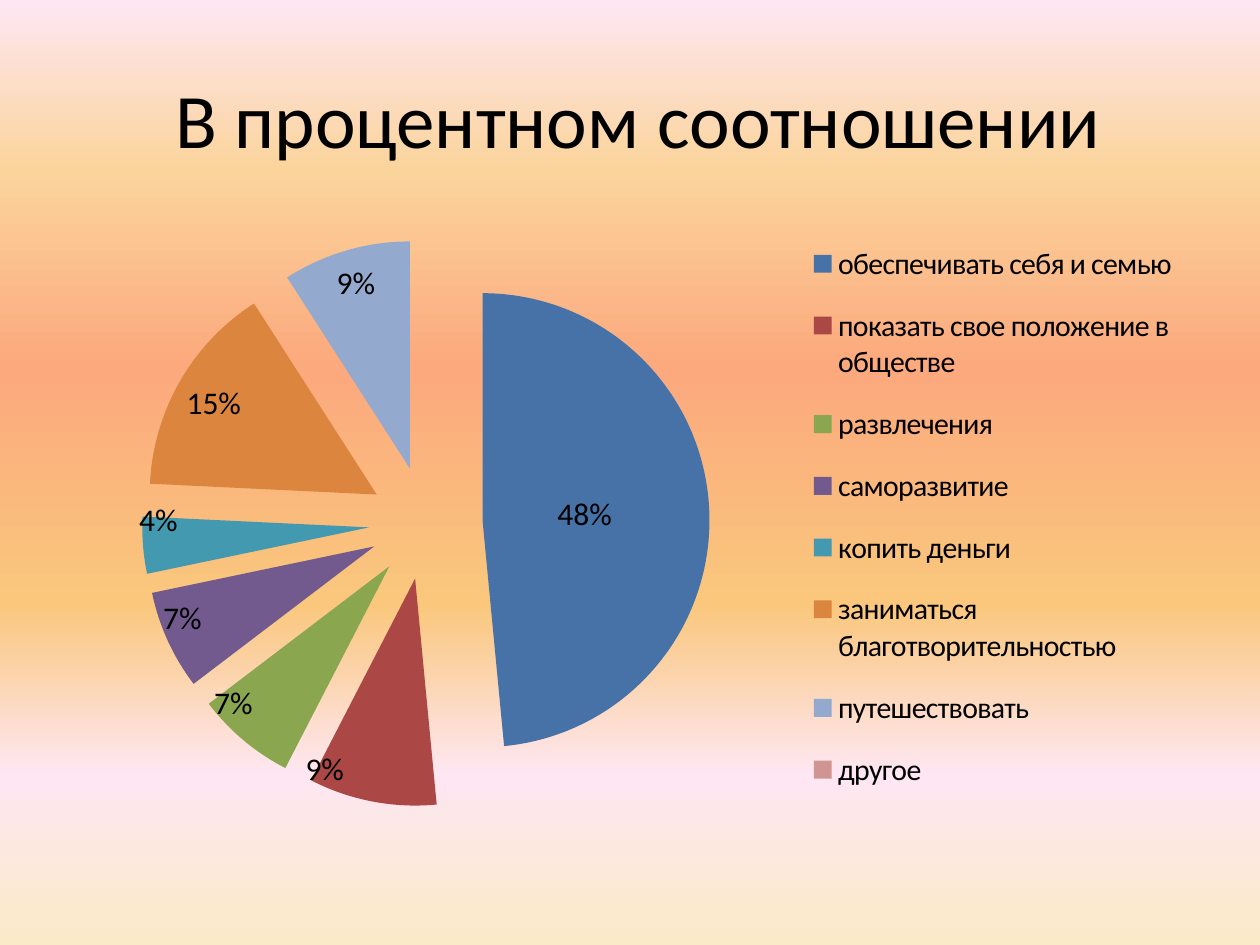
from lxml.etree import SubElement
from pptx import Presentation
from pptx.chart.data import CategoryChartData
from pptx.dml.color import RGBColor
from pptx.enum.chart import XL_CHART_TYPE, XL_LABEL_POSITION, XL_LEGEND_POSITION
from pptx.enum.text import MSO_ANCHOR, PP_ALIGN
from pptx.oxml.ns import qn
from pptx.util import Inches, Pt

FONT = "Calibri"
BLACK = RGBColor(0x00, 0x00, 0x00)
CREAM = RGBColor(0xFB, 0xEA, 0xC7)
PINK = RGBColor(0xFE, 0xE7, 0xF2)
GOLD = RGBColor(0xFA, 0xC7, 0x7D)
CORAL = RGBColor(0xFB, 0xA9, 0x7D)
SAND = RGBColor(0xFB, 0xD4, 0x9C)
BLUE = RGBColor(0x46, 0x72, 0xA8)
RED = RGBColor(0xAB, 0x47, 0x44)
GREEN = RGBColor(0x8A, 0xA6, 0x4F)
PURPLE = RGBColor(0x72, 0x5A, 0x8F)
TEAL = RGBColor(0x42, 0x99, 0xB0)
ORANGE = RGBColor(0xDC, 0x85, 0x3E)
PALE = RGBColor(0x93, 0xA9, 0xCE)
ROSE = RGBColor(0xD0, 0x94, 0x93)

WIDTH, HEIGHT = Inches(10), Inches(7.5)
# Stops run from the bottom of the slide to the top
STOPS = [(0, CREAM), (18, PINK), (36, GOLD), (61, CORAL), (82, SAND), (100, PINK)]
# Name, share, colour, and shift of the label as shares of the chart
GOALS = [
    ("обеспечивать себя и семью", 0.48, BLUE, (-0.01, 0)),
    ("показать свое положение в обществе", 0.09, RED, (-0.06, -0.01)),
    ("развлечения", 0.07, GREEN, (-0.03, -0.02)),
    ("саморазвитие", 0.07, PURPLE, (-0.01, 0)),
    ("копить деньги", 0.04, TEAL, (-0.01, -0.04)),
    ("заниматься благотворительностью", 0.15, ORANGE, None),
    ("путешествовать", 0.09, PALE, (-0.01, 0.01)),
    ("другое", 0, ROSE, None),
]


def box(x, y, w, h):
    """Turn shares of the slide into lengths."""
    return int(x * WIDTH), int(y * HEIGHT), int(w * WIDTH), int(h * HEIGHT)


def style(font, size, color=BLACK):
    font.name, font.size = FONT, Pt(size)
    font.color.rgb = color


def add_text(slide, text, area, size=18, color=BLACK, align=PP_ALIGN.CENTER):
    frame = slide.shapes.add_textbox(*area).text_frame
    frame.word_wrap = True
    frame.vertical_anchor = MSO_ANCHOR.MIDDLE
    para = frame.paragraphs[0]
    para.alignment = align
    run = para.add_run()
    run.text = text
    style(run.font, size, color)


def paint_back(slide):
    fill = slide.background.fill
    fill.gradient()
    fill.gradient_angle = 90
    stops = slide.element.find(".//" + qn("a:gsLst"))
    for stop in list(stops):
        stops.remove(stop)
    for pos, color in STOPS:
        stop = SubElement(stops, qn("a:gs"), pos=str(pos * 1000))
        SubElement(stop, qn("a:srgbClr"), val=str(color))


def set_place(owner, spot, after=None, inner=False):
    """Place a chart part by shares of the chart: x, y, w, h, or a shift x, y."""
    old = owner.find(qn("c:layout"))
    if old is not None:
        owner.remove(old)
    layout = SubElement(owner, qn("c:layout"))
    manual = SubElement(layout, qn("c:manualLayout"))
    if inner:
        SubElement(manual, qn("c:layoutTarget"), val="inner")
    if len(spot) == 4:
        for tag in ("xMode", "yMode"):
            SubElement(manual, qn("c:" + tag), val="edge")
    for tag, share in zip("xywh", spot):
        SubElement(manual, qn("c:" + tag), val=str(share))
    if after:
        owner.find(qn(after)).addnext(layout)
    else:
        owner.insert(0, layout)


def add_labels(series):
    """Show the shares, with none for an empty slice."""
    labels = series.data_labels
    labels.show_value = True
    labels.show_percentage = False
    labels.number_format = "0%;;"
    labels.number_format_is_linked = False
    labels.position = XL_LABEL_POSITION.INSIDE_END
    style(labels.font, 18)
    for i, (_, _, _, shift) in enumerate(GOALS):
        if shift:
            series.points[i].data_label.position = (
                XL_LABEL_POSITION.INSIDE_END if i else XL_LABEL_POSITION.CENTER)
            mark = labels._element.findall(qn("c:dLbl"))[-1]
            set_place(mark, shift, after="c:idx")


def add_pie(slide, area):
    data = CategoryChartData(number_format="0%")
    data.categories = [goal[0] for goal in GOALS]
    data.add_series("Series 1", [goal[1] for goal in GOALS])
    chart = slide.shapes.add_chart(XL_CHART_TYPE.PIE, *area, data).chart
    chart.has_title = False
    style(chart.font, 18)
    plot = chart.plots[0]
    plot.vary_by_categories = True

    # Slices, all pulled apart
    series = plot.series[0]
    props = series.format.fill
    props.solid()
    props.fore_color.rgb = BLUE
    burst = SubElement(series._element, qn("c:explosion"), val="25")
    series._element.find(qn("c:spPr")).addnext(burst)
    for i, (_, _, color, _) in enumerate(GOALS):
        fill = series.points[i].format.fill
        fill.solid()
        fill.fore_color.rgb = color
    add_labels(series)

    # Legend with tight letters
    chart.has_legend = True
    legend = chart.legend
    legend.position = XL_LEGEND_POSITION.RIGHT
    legend.include_in_layout = False
    style(legend.font, 17)
    legend._element.find(".//" + qn("a:defRPr")).set("spc", "-50")
    set_place(legend._element, (0.65, 0, 0.34, 0.95), after="c:legendPos")

    field = chart._chartSpace.find(".//" + qn("c:plotArea"))
    set_place(field, (0, 0.03, 0.64, 0.91), inner=True)


def main():
    deck = Presentation()
    deck.slide_width, deck.slide_height = WIDTH, HEIGHT
    slide = deck.slides.add_slide(deck.slide_layouts[6])
    paint_back(slide)
    add_text(slide, " В процентном соотношении", box(0.05, 0.04, 0.9, 0.17), size=44)
    add_pie(slide, box(0.05, 7 / 30, 0.9, 0.66))
    deck.save("out.pptx")


if __name__ == "__main__":
    main()
